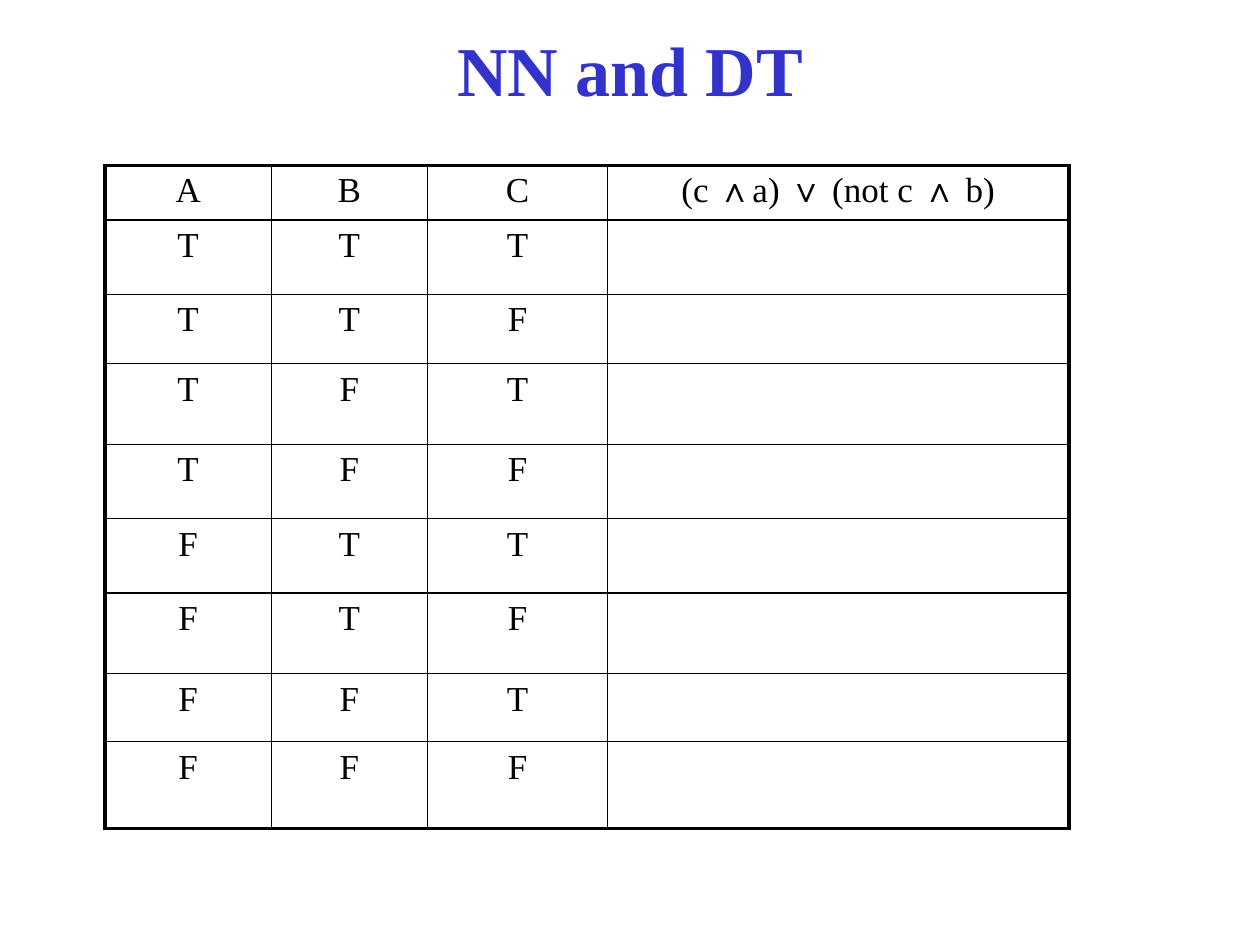
import itertools
from dataclasses import dataclass

import lxml.etree
import pptx
import pptx.dml.color
import pptx.enum.text
import pptx.oxml.ns
import pptx.util

BLACK = pptx.dml.color.RGBColor(0x00, 0x00, 0x00)
TITLE_BLUE = pptx.dml.color.RGBColor(0x33, 0x33, 0xCC)
FONT = "Times New Roman"
SLIDE_W, SLIDE_H = 10, 7.5
OUTER_PT, INNER_PT = 2.25, 1
COLUMN_WIDTHS = (1.32, 1.24, 1.43, 3.66)
ROW_HEIGHTS = (0.41, 0.59, 0.55, 0.64, 0.59, 0.59, 0.64, 0.54, 0.69)
HEADER = ("A", "B", "C", "(c ∧a) ∨ (not c ∧ b)")
TRUTH_ROWS = [(*values, "") for values in itertools.product("TF", repeat=3)]


@dataclass(frozen=True)
class TextStyle:
    size: float
    color: pptx.dml.color.RGBColor
    bold: bool = False


@dataclass(frozen=True)
class Area:
    left: float
    top: float
    width: float
    height: float

    def emu(self) -> list[int]:
        shares = (self.left, self.top, self.width, self.height)
        sides = (SLIDE_W, SLIDE_H) * 2
        return [pptx.util.Inches(share * side) for share, side in zip(shares, sides)]


TITLE_STYLE = TextStyle(40, TITLE_BLUE, True)
CELL_STYLE = TextStyle(20, BLACK)
TITLE_AREA = Area(1 / 30, 0.023, 14 / 15, 0.1)
TABLE_AREA = Area(1 / 12, 0.175, sum(COLUMN_WIDTHS) / SLIDE_W, sum(ROW_HEIGHTS) / SLIDE_H)


def add_element(parent: lxml.etree._Element, tag: str, **attributes: str) -> lxml.etree._Element:
    return lxml.etree.SubElement(parent, pptx.oxml.ns.qn(tag), attributes)


def write_text(tf: pptx.text.text.TextFrame, text: str, style: TextStyle) -> None:
    tf.text = text
    p = tf.paragraphs[0]
    p.alignment = pptx.enum.text.PP_ALIGN.CENTER
    for r in p.runs:
        r.font.name = FONT
        r.font.size = pptx.util.Pt(style.size)
        r.font.bold = style.bold
        r.font.color.rgb = style.color


def draw_title(s: pptx.slide.Slide, area: Area, text: str) -> None:
    tf = s.shapes.add_textbox(*area.emu()).text_frame
    tf.word_wrap = True
    tf.vertical_anchor = pptx.enum.text.MSO_ANCHOR.MIDDLE
    write_text(tf, text, TITLE_STYLE)


def set_borders(cell: pptx.table._Cell, outer_sides: dict[str, bool]) -> None:
    properties = cell._tc.get_or_add_tcPr()
    for side, is_outer in outer_sides.items():
        width = pptx.util.Pt(OUTER_PT if is_outer else INNER_PT)
        line = add_element(properties, f"a:ln{side}", w=str(width))
        fill = add_element(line, "a:solidFill")
        add_element(fill, "a:srgbClr", val=str(BLACK))


def draw_table(s: pptx.slide.Slide, area: Area, rows: list[tuple[str, ...]]) -> None:
    last_row, last_column = len(rows) - 1, len(COLUMN_WIDTHS) - 1
    table = s.shapes.add_table(len(rows), len(COLUMN_WIDTHS), *area.emu()).table
    table.first_row = table.horz_banding = False
    for column, width in zip(table.columns, COLUMN_WIDTHS):
        column.width = pptx.util.Inches(width)
    for row, height in zip(table.rows, ROW_HEIGHTS):
        row.height = pptx.util.Inches(height)
    for i, values in enumerate(rows):
        for j, value in enumerate(values):
            cell = table.cell(i, j)
            write_text(cell.text_frame, value, CELL_STYLE)
            spacing = add_element(cell.text_frame.paragraphs[0]._p.get_or_add_pPr(), "a:spcBef")
            add_element(spacing, "a:spcPct", val="20000")
            set_borders(cell, {"L": j == 0, "R": j == last_column, "T": i == 0, "B": i == last_row})
            cell.fill.background()


def main() -> None:
    prs = pptx.Presentation()
    prs.slide_width = pptx.util.Inches(SLIDE_W)
    prs.slide_height = pptx.util.Inches(SLIDE_H)
    s = prs.slides.add_slide(prs.slide_layouts[6])
    draw_title(s, TITLE_AREA, "NN and DT")
    draw_table(s, TABLE_AREA, [HEADER, *TRUTH_ROWS])
    prs.save("out.pptx")


if __name__ == "__main__":
    main()
